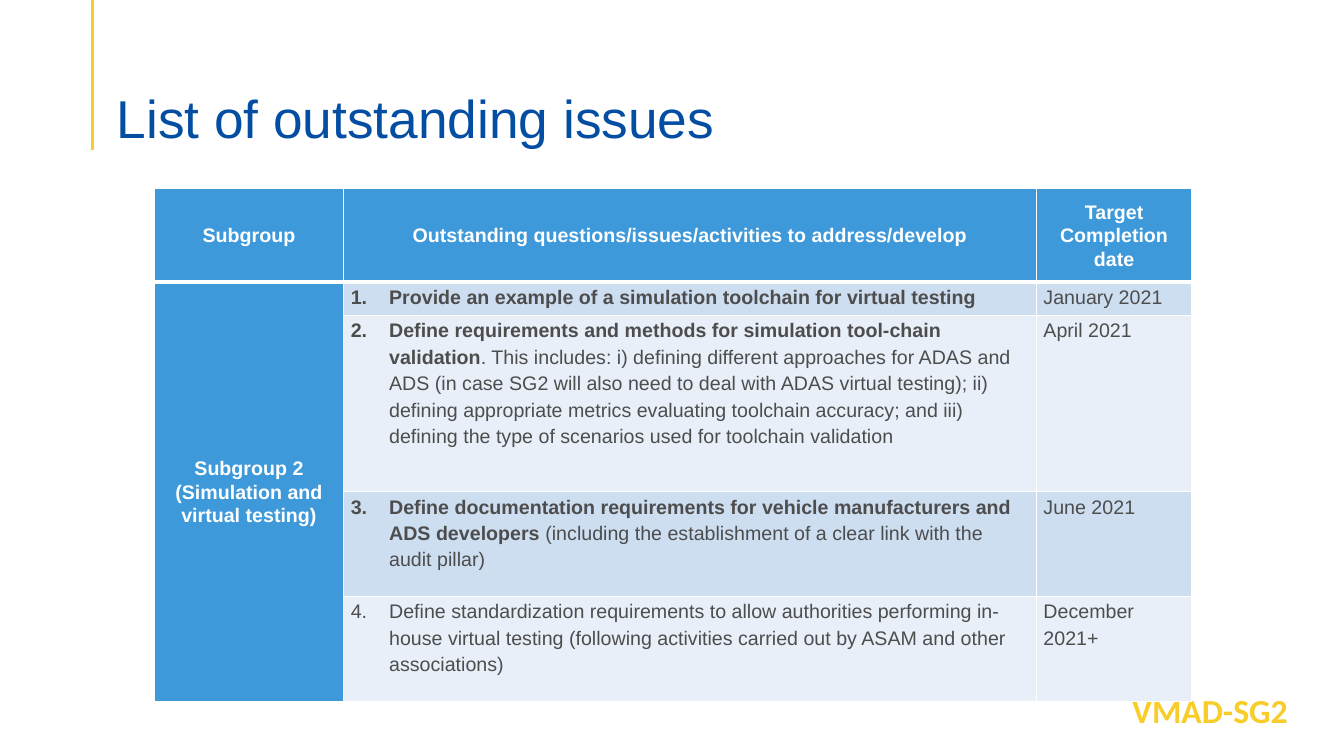
from lxml import etree
from pptx import Presentation
from pptx.dml.color import RGBColor
from pptx.enum.shapes import MSO_CONNECTOR, MSO_SHAPE
from pptx.enum.text import MSO_ANCHOR, PP_ALIGN
from pptx.oxml.ns import qn
from pptx.util import Inches, Pt

LINE = MSO_CONNECTOR.STRAIGHT
RECT = MSO_SHAPE.RECTANGLE
TOP, MIDDLE, BOTTOM = MSO_ANCHOR.TOP, MSO_ANCHOR.MIDDLE, MSO_ANCHOR.BOTTOM
LEFT, CENTER = PP_ALIGN.LEFT, PP_ALIGN.CENTER

WHITE = RGBColor(0xFF, 0xFF, 0xFF)
YELLOW = RGBColor(0xF8, 0xCC, 0x29)
NAVY = RGBColor(0x03, 0x4E, 0xA2)
BLUE = RGBColor(0x3E, 0x99, 0xDA)
GRAY = RGBColor(0x4D, 0x4D, 0x4D)
BANDS = [RGBColor(0xCE, 0xDE, 0xF1), RGBColor(0xE8, 0xEF, 0xF8)]

WIDTH, HEIGHT = Inches(13.33), Inches(7.5)
COLS = [1.88, 6.87, 1.54]
ROWS = [0.93, 0.33, 1.75, 1.04, 1.04]

HEADS = ["Subgroup", "Outstanding questions/issues/activities to address/develop",
         "Target Completion date"]
GROUP = ["Subgroup 2", "(Simulation and virtual testing)"]
ISSUES = [
    ("Provide an example of a simulation toolchain for virtual testing", "",
     "January 2021"),
    ("Define requirements and methods for simulation tool-chain validation",
     ". This includes: i) defining different approaches for ADAS and ADS (in case SG2 "
     "will also need to deal with ADAS virtual testing); ii) defining appropriate metrics "
     "evaluating toolchain accuracy; and iii) defining the type of scenarios used for "
     "toolchain validation", "April 2021"),
    ("Define documentation requirements for vehicle manufacturers and ADS developers ",
     "(including the establishment of a clear link with the audit pillar)", "June 2021"),
    ("", "Define standardization requirements to allow authorities performing in-house "
     "virtual testing (following activities carried out by ASAM and other associations)",
     "December 2021+"),
]


def style(run, size, color, bold=False, face="Arial"):
    font = run.font
    font.name, font.size, font.bold = face, Pt(size), bold
    font.color.rgb = color


def write(para, parts, size, color, align=LEFT, space=1.0, face="Arial"):
    para.alignment, para.line_spacing = align, space
    for text, bold in parts:
        if text:
            run = para.add_run()
            run.text = text
            style(run, size, color, bold, face)


def number(para, start):
    props = para._p.get_or_add_pPr()
    props.set("marL", str(Inches(0.38)))
    props.set("indent", str(-Inches(0.38)))
    mark = etree.SubElement(props, qn("a:buAutoNum"), type="arabicPeriod")
    if start > 1:
        mark.set("startAt", str(start))


def edge(cell, top, bottom):
    props = cell._tc.get_or_add_tcPr()
    sides = [("L", 1), ("R", 1), ("T", top), ("B", bottom)]
    for spot, (side, width) in enumerate(sides):
        line = etree.Element(qn("a:ln" + side), w=str(Pt(width)))
        fill = etree.SubElement(line, qn("a:solidFill"))
        etree.SubElement(fill, qn("a:srgbClr"), val=str(WHITE))
        props.insert(spot, line)


def label(cell, lines):
    cell.vertical_anchor = MIDDLE
    frame = cell.text_frame
    for spot, text in enumerate(lines):
        para = frame.add_paragraph() if spot else frame.paragraphs[0]
        write(para, [(text, True)], 14, WHITE, CENTER, 1.07)


def entry(cell, parts, start=0):
    cell.vertical_anchor = TOP
    para = cell.text_frame.paragraphs[0]
    write(para, parts, 14, GRAY, space=1.2)
    para.space_before = para.space_after = Pt(12)
    if start:
        number(para, start)


def draw_badge(slide, left, top, width, height):
    badge = slide.shapes.add_shape(RECT, left, top, width, height)
    badge.shadow.inherit = False
    badge.fill.solid()
    badge.fill.fore_color.rgb = WHITE
    badge.line.fill.background()
    frame = badge.text_frame
    frame.word_wrap = True
    write(frame.paragraphs[0], [("VMAD-SG2", True)], 24, YELLOW, CENTER, face="Calibri")


def draw_title(slide, left, top, width, height):
    side = left - Inches(0.14)
    rule = slide.shapes.add_connector(LINE, side, 0, side, top + height)
    rule.line.color.rgb, rule.line.width = YELLOW, Pt(2.25)
    etree.SubElement(rule._element.spPr, qn("a:effectLst"))
    frame = slide.shapes.add_textbox(left, top, width, height).text_frame
    frame.word_wrap, frame.vertical_anchor, frame.margin_bottom = True, BOTTOM, 0
    write(frame.paragraphs[0], [("List of outstanding issues", False)], 38, NAVY, space=0.9)


def draw_table(slide, left, top, width, height):
    table = slide.shapes.add_table(len(ROWS), len(COLS), left, top, width, height).table
    for col, share in zip(table.columns, COLS):
        col.width = int(width * share / sum(COLS))
    for row, share in zip(table.rows, ROWS):
        row.height = int(height * share / sum(ROWS))
    for r in range(len(ROWS)):
        for c in range(len(COLS)):
            cell = table.cell(r, c)
            cell.margin_left = cell.margin_right = Inches(0.07)
            cell.margin_top = cell.margin_bottom = 0
            cell.fill.solid()
            cell.fill.fore_color.rgb = BANDS[(r - 1) % 2] if r and c else BLUE
            edge(cell, 3 if r == 1 else 1, 1 if r else 3)
    for c, head in enumerate(HEADS):
        label(table.cell(0, c), [head])
    group = table.cell(1, 0)
    group.merge(table.cell(len(ROWS) - 1, 0))
    label(group, GROUP)
    for r, (lead, rest, date) in enumerate(ISSUES, 1):
        entry(table.cell(r, 1), [(lead, True), (rest, False)], r)
        entry(table.cell(r, 2), [(date, False)])


def main():
    deck = Presentation()
    deck.slide_width, deck.slide_height = WIDTH, HEIGHT
    slide = deck.slides.add_slide(deck.slide_layouts[6])
    draw_badge(slide, Inches(10.91), Inches(6.79), Inches(2.18), Inches(0.5))
    draw_title(slide, Inches(1.06), Inches(0.63), Inches(11.22), Inches(0.86))
    draw_table(slide, Inches(1.53), Inches(1.87), Inches(sum(COLS)), Inches(sum(ROWS)))
    deck.save("out.pptx")


if __name__ == "__main__":
    main()
